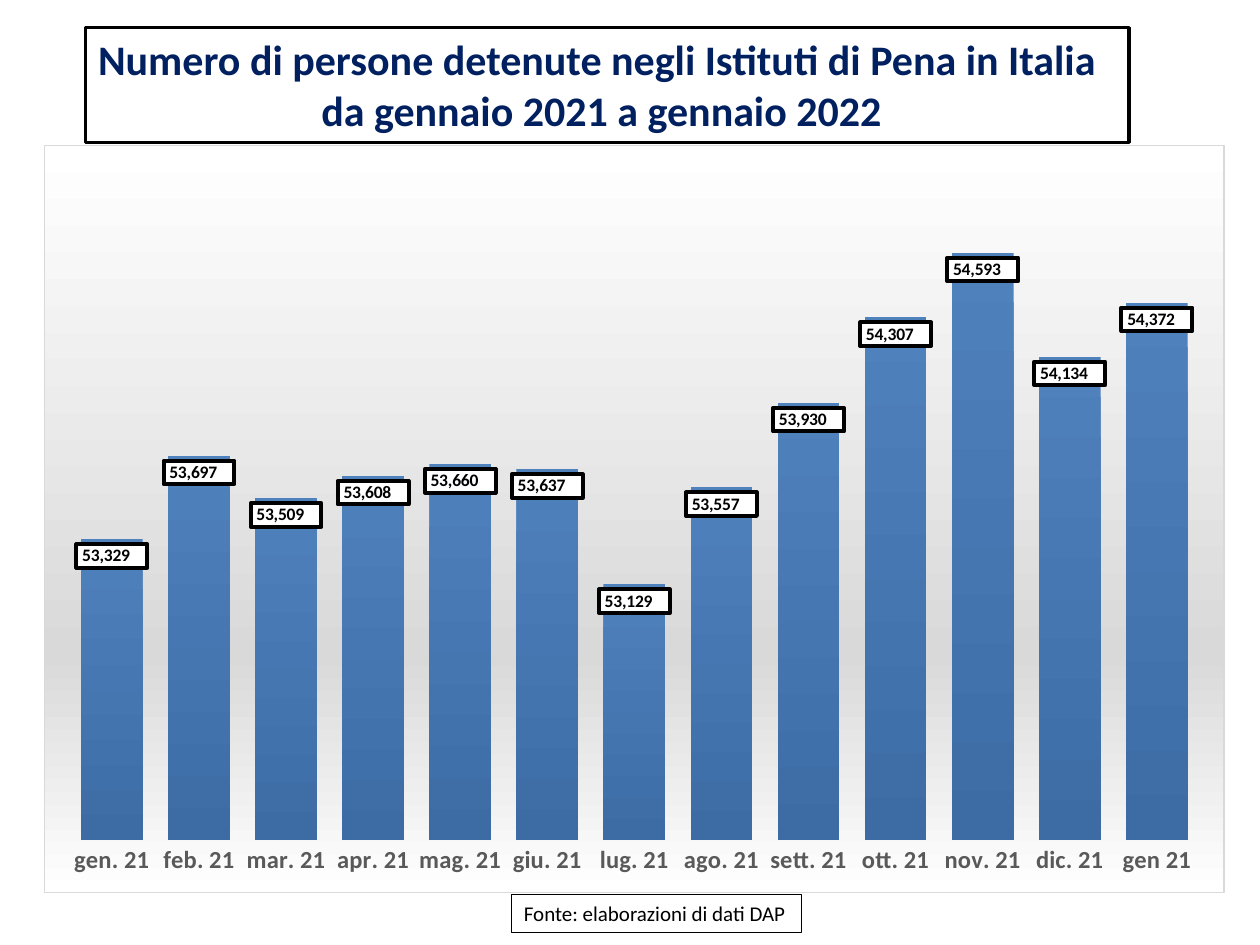
from lxml import etree
from pptx import Presentation
from pptx.chart.data import CategoryChartData
from pptx.dml.color import RGBColor
from pptx.enum.chart import XL_CHART_TYPE as ChartType, XL_LABEL_POSITION as LabelPos, XL_TICK_MARK as Tick
from pptx.enum.shapes import MSO_SHAPE as Shape
from pptx.enum.text import MSO_ANCHOR as Anchor, PP_ALIGN as Align
from pptx.oxml import parse_xml
from pptx.util import Inches, Pt

BLACK = RGBColor(0x00, 0x00, 0x00)
WHITE = RGBColor(0xFF, 0xFF, 0xFF)
NAVY = RGBColor(0x00, 0x20, 0x60)
GREY = RGBColor(0x59, 0x59, 0x59)
SILVER = RGBColor(0xD9, 0xD9, 0xD9)
BLUE = RGBColor(0x4F, 0x81, 0xBD)
DARK_BLUE = RGBColor(0x3D, 0x6C, 0xA4)

# Content
TITLE = [("Numero di persone detenute negli Istituti di Pena in Italia", Align.LEFT),
         ("da gennaio 2021 a gennaio 2022", Align.CENTER)]
SOURCE = [("Fonte: elaborazioni di dati DAP", Align.LEFT)]
DETAINEES = [("gen. 21", 53329), ("feb. 21", 53697), ("mar. 21", 53509),
             ("apr. 21", 53608), ("mag. 21", 53660), ("giu. 21", 53637),
             ("lug. 21", 53129), ("ago. 21", 53557), ("sett. 21", 53930),
             ("ott. 21", 54307), ("nov. 21", 54593), ("dic. 21", 54134),
             ("gen 21", 54372)]
NUMBER_FORMAT = r'_-* #,##0\ _€_-;\-* #,##0\ _€_-;_-* "-"?'
PLOT_LAYOUT = {"x": 0.02, "y": 0.02, "w": 0.96, "h": 0.91}

NS = ('xmlns:c="http://schemas.openxmlformats.org/drawingml/2006/chart" '
      'xmlns:a="http://schemas.openxmlformats.org/drawingml/2006/main"')


def set_font(font, size, color, bold=False):
    values = {"name": "Calibri", "size": Pt(size), "bold": bold}
    for key, value in values.items():
        setattr(font, key, value)
    font.color.rgb = color


def add_box(slide, at, lines, line_width, size, color, bold=False, right=0.1):
    sp = slide.shapes.add_shape(Shape.RECTANGLE, *map(Inches, at))
    sp.shadow.inherit = False
    sp.fill.solid()
    sp.fill.fore_color.rgb = WHITE
    sp.line.color.rgb = BLACK
    sp.line.width = Pt(line_width)
    tf = sp.text_frame
    tf.word_wrap = True
    tf.vertical_anchor = Anchor.TOP
    tf.margin_right = Inches(right)
    for i, (text, align) in enumerate(lines):
        p = tf.paragraphs[0] if i == 0 else tf.add_paragraph()
        p.alignment = align
        r = p.add_run()
        r.text = text
        set_font(r.font, size, color, bold)


def solid(color):
    return f'<a:solidFill><a:srgbClr val="{color}"/></a:solidFill>'


def vertical_gradient(*stops):
    gs = "".join(f'<a:gs pos="{pos * 1000}"><a:srgbClr val="{color}"/></a:gs>'
                 for pos, color in stops)
    return (f'<a:gradFill><a:gsLst>{gs}</a:gsLst>'
            '<a:lin ang="5400000" scaled="0"/></a:gradFill>')


def outline(color, width):
    return f'<a:ln w="{Pt(width)}">{solid(color)}</a:ln>'


def shape_props(content):
    return parse_xml(f"<c:spPr {NS}>{content}</c:spPr>")


prs = Presentation()
prs.slide_width, prs.slide_height = Inches(10), Inches(7.5)
slide = prs.slides.add_slide(prs.slide_layouts[6])

# Title
add_box(slide, (0.68, 0.22, 8.28, 0.91), TITLE, 2, 24, NAVY, bold=True, right=0.19)

# Chart
data = CategoryChartData(number_format=NUMBER_FORMAT)
data.categories = [month for month, _ in DETAINEES]
data.add_series("Series 1", [count for _, count in DETAINEES])
chart = slide.shapes.add_chart(ChartType.COLUMN_CLUSTERED, Inches(0.35), Inches(1.15),
                               Inches(9.37), Inches(5.94), data).chart
chart.has_legend = chart.has_title = False
set_font(chart.font, 10, BLACK)

# Axes
months = chart.category_axis
months.major_tick_mark = months.minor_tick_mark = Tick.NONE
months.format.line.fill.background()
set_font(months.tick_labels.font, 14, GREY, bold=True)
counts = chart.value_axis
counts.minimum_scale, counts.maximum_scale = 52000, 55000
counts.has_major_gridlines = False
counts.visible = False

# Columns and their labels
plot = chart.plots[0]
plot.gap_width = 41
plot.vary_by_categories = False
series = plot.series[0]
series.format.fill.gradient()
series.format.fill.gradient_angle = 270
for stop, color, position in zip(series.format.fill.gradient_stops, (BLUE, DARK_BLUE), (0, 1)):
    stop.color.rgb = color
    stop.position = position
plot.has_data_labels = True
labels = plot.data_labels
label_format = {"show_value": True, "number_format": NUMBER_FORMAT,
                "number_format_is_linked": False, "position": LabelPos.INSIDE_END}
for key, value in label_format.items():
    setattr(labels, key, value)
set_font(labels.font, 10, BLACK, bold=True)

# Label boxes, chart background and plot position
space = chart.element
space.find(".//{*}dLbls/{*}numFmt").addnext(shape_props(solid(WHITE) + outline(BLACK, 2.25)))
background = vertical_gradient((0, WHITE), (68, SILVER), (100, WHITE))
space.find("{*}chart").addnext(shape_props(background + outline(SILVER, 0.75)))
plot_area = space.find(".//{*}plotArea")
plot_area.append(shape_props("<a:noFill/>"))
for old in plot_area.findall("{*}layout"):
    plot_area.remove(old)
modes = '<c:layoutTarget val="inner"/><c:xMode val="edge"/><c:yMode val="edge"/>'
sizes = "".join(f'<c:{key} val="{value}"/>' for key, value in PLOT_LAYOUT.items())
plot_area.insert(0, parse_xml(
    f"<c:layout {NS}><c:manualLayout>{modes}{sizes}</c:manualLayout></c:layout>"))

# Source
add_box(slide, (4.06, 7.1, 2.3, 0.3), SOURCE, 0.75, 12, BLACK)

prs.save("out.pptx")
